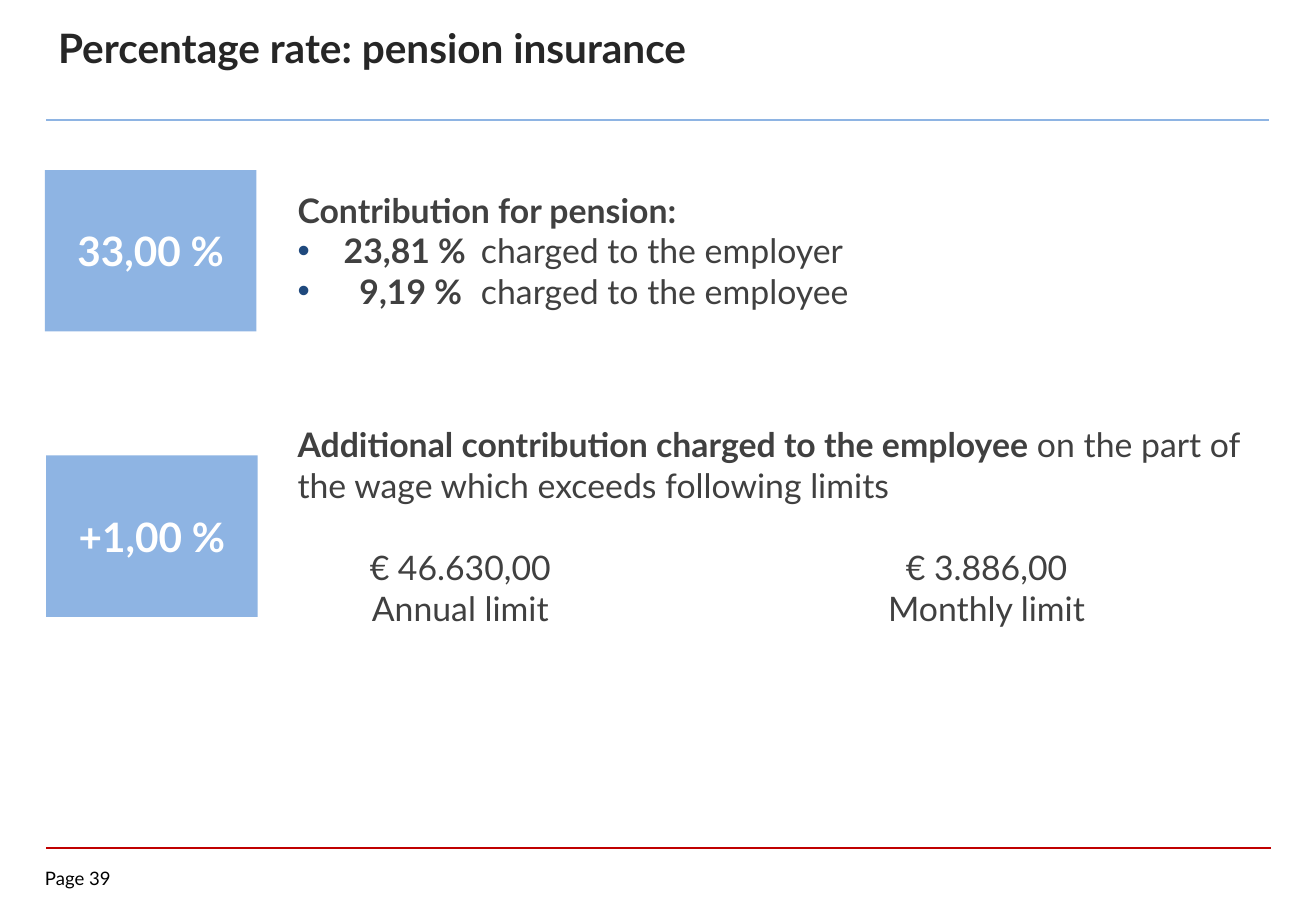
from lxml import etree
from pptx import Presentation
from pptx.dml.color import RGBColor
from pptx.enum import shapes, text
from pptx.oxml import ns
from pptx.util import Inches, Pt

FONT = "Lato"
BLUE, RED, NAVY, WHITE = "8EB4E3", "C00000", "1F497D", "FFFFFF"
BLACK, TITLE_GREY, BODY_GREY = "000000", "262626", "404040"

# A paragraph is a list of (wording, bold) spans.
TITLE = [[("Percentage rate: pension insurance", True)]]
FOOTER = [[("Page 39", False)]]
PENSION = [
    [("Contribution for pension:", True)],
    [("23,81 %", True), ("\tcharged to the employer", False)],
    [("9,19 %", True), ("\tcharged to the employee", False)],
]
PENSION_INDENTS = [0, 0.38, 0.51]
CHARGED_TAB = 1.51
ADDITIONAL = [[
    ("Additional contribution charged to the employee ", True),
    ("on the part of the wage which exceeds following limits", False),
]]
RATES = [("33,00 %", 0.37, 1.4), ("+1,00 %", 0.38, 3.75)]
LIMITS = [("€ 46.630,00", "Annual limit"), ("€ 3.886,00", "Monthly limit")]
LIMIT_LEFT, LIMIT_STEP = 2.66, 4.33
RULES = [(0.99, 10.44, BLUE, 1.5), (6.98, 10.46, RED, 1)]  # y, right end, colour, width

BODY_INSETS = (0.1, 0.05, 0.04, 0.05)
CENTER, MIDDLE = text.PP_ALIGN.CENTER, text.MSO_ANCHOR.MIDDLE


def rgb(value):
    return RGBColor.from_string(value)


def write(shape, paragraphs, size, color, insets=(0.1, 0.05, 0.1, 0.05),
          align=text.PP_ALIGN.LEFT, anchor=text.MSO_ANCHOR.TOP, indents=()):
    frame = shape.text_frame
    frame.word_wrap = True
    frame.vertical_anchor = anchor
    (frame.margin_left, frame.margin_top,
     frame.margin_right, frame.margin_bottom) = map(Inches, insets)
    for index, spans in enumerate(paragraphs):
        para = frame.paragraphs[0] if index == 0 else frame.add_paragraph()
        para.alignment = align
        if indents and indents[index]:
            add_bullet(para, indents[index])
        para.font.name, para.font.size = FONT, Pt(size)
        para.font.color.rgb = rgb(color)
        for wording, bold in spans:
            span = para.add_run()
            span.text = wording
            span.font.bold = bold


def add_bullet(para, indent):
    """Hang a bullet at the left edge and set the tab before the wording."""
    props = para._p.get_or_add_pPr()
    props.set("marL", str(Inches(indent)))
    props.set("indent", str(-Inches(indent)))

    def add(parent, tag, **attributes):
        return etree.SubElement(parent, ns.qn(tag), **attributes)

    add(add(props, "a:buClr"), "a:srgbClr", val=NAVY)
    add(props, "a:buSzPct", val="103000")
    add(props, "a:buFont", typeface="Arial")
    add(props, "a:buChar", char="•")
    add(add(props, "a:tabLst"), "a:tab", pos=str(Inches(CHARGED_TAB)), algn="l")


def add_text(page, place, paragraphs, size, color, **options):
    box = page.shapes.add_textbox(*map(Inches, place))
    write(box, paragraphs, size, color, **options)


def add_rule(page, y, right, color, width):
    rule = page.shapes.add_connector(
        shapes.MSO_CONNECTOR.STRAIGHT, *map(Inches, (0.38, y, right, y)))
    rule.line.color.rgb = rgb(color)
    rule.line.width = Pt(width)
    etree.SubElement(rule._element.spPr, ns.qn("a:effectLst"))


def add_rate(page, rate, left, top):
    tile = page.shapes.add_shape(
        shapes.MSO_SHAPE.RECTANGLE, *map(Inches, (left, top, 1.74, 1.33)))
    tile.shadow.inherit = False
    tile.fill.solid()
    tile.fill.fore_color.rgb = rgb(BLUE)
    tile.line.fill.background()
    write(tile, [[(rate, True)]], 24, WHITE, align=CENTER, anchor=MIDDLE)


def main():
    deck = Presentation()
    deck.slide_width, deck.slide_height = Inches(10.83), Inches(7.5)
    page = deck.slides.add_slide(deck.slide_layouts[6])

    for rule in RULES:
        add_rule(page, *rule)
    add_text(page, (0.37, 7.14, 0.73, 0.22), FOOTER, 11, BLACK, insets=(0, 0, 0, 0))
    add_text(page, (0.38, 0.19, 7.56, 0.71), TITLE, 24, TITLE_GREY,
             insets=(0.1, 0, 0.1, 0))
    for rate in RATES:
        add_rate(page, *rate)
    add_text(page, (2.35, 1.39, 8.11, 1.34), PENSION, 20, BODY_GREY,
             anchor=MIDDLE, indents=PENSION_INDENTS)
    add_text(page, (2.35, 3.44, 8.11, 1.18), ADDITIONAL, 20, BODY_GREY,
             insets=BODY_INSETS)
    for column, lines in enumerate(LIMITS):
        add_text(page, (LIMIT_LEFT + column * LIMIT_STEP, 4.38, 2.2, 0.91),
                 [[(line, False)] for line in lines], 20, BODY_GREY,
                 insets=BODY_INSETS, align=CENTER, anchor=MIDDLE)
    deck.save("out.pptx")


if __name__ == "__main__":
    main()
